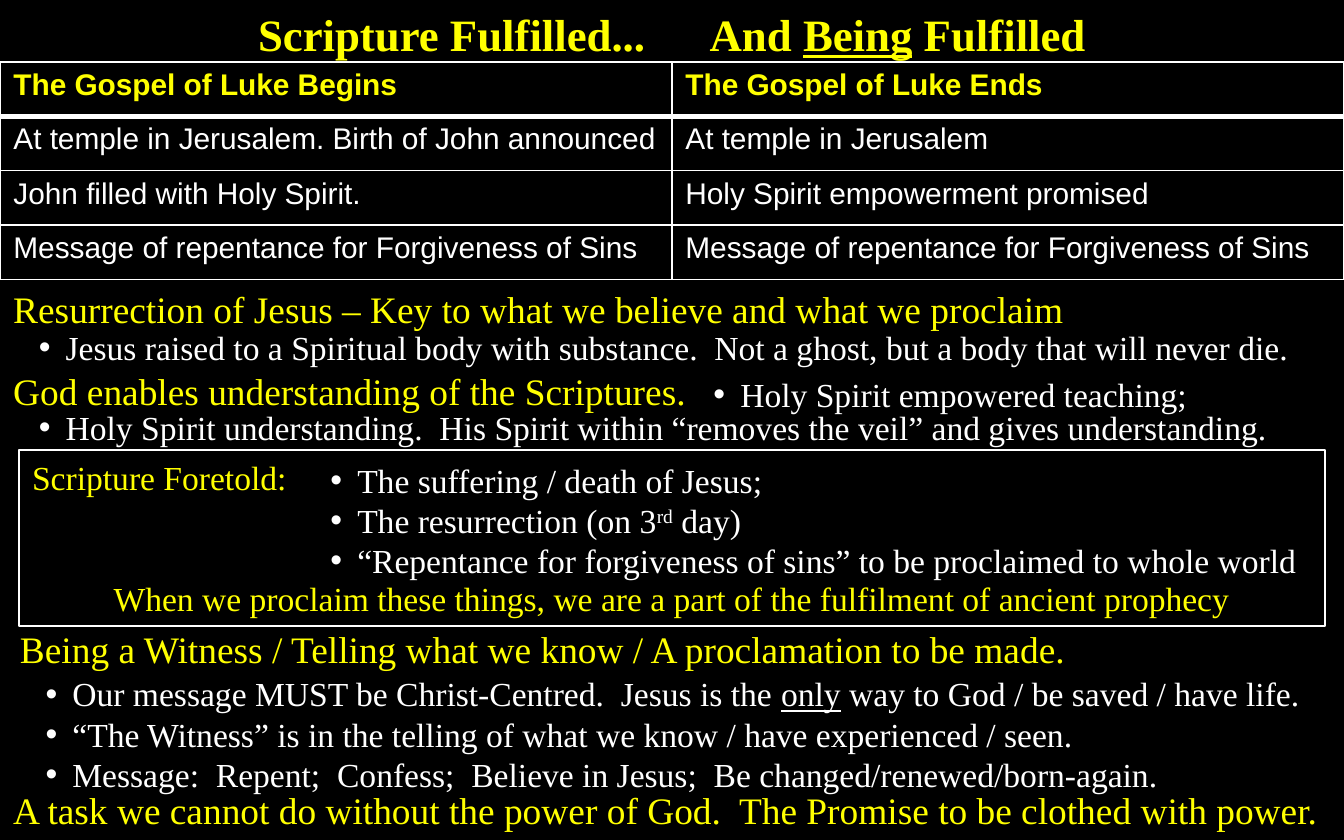
"""Build the slide on scripture fulfilled and being fulfilled."""
import pptx
import pptx.dml.color
import pptx.enum.shapes
import pptx.enum.text
import pptx.oxml
import pptx.oxml.ns
import pptx.util
from pptx.util import Inches

COLORS = {"black": "000000", "white": "FFFFFF", "yellow": "FFFF00"}
SERIF, SANS = "Times New Roman", "Arial"
ALIGN = pptx.enum.text.PP_ALIGN


def rgb(name):
    """Return the named colour."""
    return pptx.dml.color.RGBColor.from_string(COLORS[name])


def add_xml(parent, markup):
    """Append a DrawingML element to its parent."""
    namespace = pptx.oxml.ns.nsdecls("a")
    tag, rest = markup[:markup.index(" ")], markup[markup.index(" "):]
    parent.append(pptx.oxml.parse_xml(f"{tag} {namespace}{rest}"))


def write_text(paragraph, text, size=18, font=SERIF, color="white", bold=False,
               align=ALIGN.LEFT, bullet=False, tab=None, space_before=0):
    """Write text, given as a string or as (text, style) runs, in a paragraph."""
    properties = paragraph._p.get_or_add_pPr()
    if bullet:
        properties.set("marL", str(Inches(0.2)))
        properties.set("indent", str(-Inches(0.2)))
        add_xml(properties, f'<a:buFont typeface="{SANS}"/>')
        add_xml(properties, '<a:buChar char="•"/>')
    if tab:
        add_xml(properties, f'<a:tabLst ><a:tab pos="{Inches(tab)}" algn="l"/></a:tabLst>')
    paragraph.alignment = align
    if space_before:
        paragraph.space_before = pptx.util.Pt(space_before)
    for words, style in [(text, "")] if isinstance(text, str) else text:
        run = paragraph.add_run()
        run.text = words
        run.font.size = pptx.util.Pt(size)
        run.font.name = font
        run.font.bold = bold
        run.font.color.rgb = rgb(color)
        if style == "underline":
            run.font.underline = True
        if style == "superscript":
            run._r.get_or_add_rPr().set("baseline", "30000")


class SlideBuilder:
    """Hold the style and the current slide."""

    def __init__(self, presentation):
        """Add a title-only slide with a black background."""
        self.slide = presentation.slides.add_slide(presentation.slide_layouts[5])
        self.slide.background.fill.solid()
        self.slide.background.fill.fore_color.rgb = rgb("black")

    def title(self, runs, left_margin, tab):
        """Place and format the title."""
        shape = self.slide.shapes.title
        shape.left, shape.top = Inches(0), Inches(0)
        shape.width, shape.height = Inches(10), Inches(0.5)
        frame = shape.text_frame
        frame.auto_size = pptx.enum.text.MSO_AUTO_SIZE.NONE
        frame.vertical_anchor = pptx.enum.text.MSO_ANCHOR.TOP
        frame.margin_left = Inches(left_margin)
        write_text(frame.paragraphs[0], runs, size=24, color="yellow", bold=True, tab=tab)

    def text(self, left, top, width, height, lines, **style):
        """Add a text box with one paragraph per line."""
        shape = self.slide.shapes.add_textbox(
            Inches(left), Inches(top), Inches(width), Inches(height))
        frame = shape.text_frame
        frame.word_wrap = True
        frame.auto_size = pptx.enum.text.MSO_AUTO_SIZE.SHAPE_TO_FIT_TEXT
        for index, line in enumerate(lines):
            paragraph = frame.add_paragraph() if index else frame.paragraphs[0]
            write_text(paragraph, line, **style)

    def heading(self, left, top, width, text):
        """Add a yellow heading."""
        self.text(left, top, width, 0.44, [text], size=20, color="yellow")

    def bullets(self, left, top, width, height, lines):
        """Add a bulleted list."""
        self.text(left, top, width, height, lines, bullet=True)

    def box(self, left, top, width, height, opening, closing):
        """Add an outlined box with an opening and a closing line."""
        shape = self.slide.shapes.add_shape(
            pptx.enum.shapes.MSO_SHAPE.RECTANGLE,
            Inches(left), Inches(top), Inches(width), Inches(height))
        shape.shadow.inherit = False
        shape.fill.background()
        shape.line.color.rgb = rgb("white")
        shape.line.width = pptx.util.Pt(1.25)
        frame = shape.text_frame
        frame.word_wrap = True
        frame.vertical_anchor = pptx.enum.text.MSO_ANCHOR.TOP
        write_text(frame.paragraphs[0], opening, color="yellow")
        write_text(frame.add_paragraph(), closing, color="yellow",
                   align=ALIGN.CENTER, space_before=43)

    def table(self, left, top, width, height, rows):
        """Add a ruled table with a heavy line under its header."""
        table = self.slide.shapes.add_table(
            len(rows), len(rows[0]), Inches(left), Inches(top),
            Inches(width), Inches(height)).table
        table.horz_banding = False
        for row_index, row in enumerate(rows):
            header = row_index == 0
            for column_index, text in enumerate(row):
                cell = table.cell(row_index, column_index)
                write_text(cell.text_frame.paragraphs[0], text, size=16, font=SANS,
                           color="yellow" if header else "white", bold=header)
                properties = cell._tc.get_or_add_tcPr()
                for side in "LRTB":
                    heavy = (row_index, side) in ((0, "B"), (1, "T"))
                    line_width = pptx.util.Pt(3 if heavy else 1)
                    add_xml(properties, f'<a:ln{side} w="{line_width}"><a:solidFill>'
                            f'<a:srgbClr val="{COLORS["white"]}"/>'
                            f'</a:solidFill></a:ln{side}>')
                cell.fill.background()


def main():
    """Build and save the presentation."""
    presentation = pptx.Presentation()
    presentation.slide_width, presentation.slide_height = Inches(10), Inches(6.25)
    builder = SlideBuilder(presentation)
    builder.title([("Scripture Fulfilled...\tAnd ", ""), ("Being", "underline"),
                   (" Fulfilled", "")], left_margin=1.92, tab=3.36)
    builder.heading(0, 2.08, 8.82,
                    "Resurrection of Jesus – Key to what we believe and what we proclaim")
    builder.bullets(0.19, 2.38, 9.81, 0.4, [
        "Jesus raised to a Spiritual body with substance.  "
        "Not a ghost, but a body that will never die."])
    builder.table(0, 0.46, 10, 1.62, [
        ("The Gospel of Luke Begins", "The Gospel of Luke Ends"),
        ("At temple in Jerusalem. Birth of John announced", "At temple in Jerusalem"),
        ("John filled with Holy Spirit.", "Holy Spirit empowerment promised"),
        ("Message of repentance for Forgiveness of Sins",) * 2])
    builder.heading(0, 2.69, 8.82, "God enables understanding of the Scriptures.")
    builder.bullets(0.19, 2.98, 9.81, 0.4, [
        "Holy Spirit understanding.  "
        "His Spirit within “removes the veil” and gives understanding."])
    builder.box(0.14, 3.35, 9.72, 1.31, "Scripture Foretold:",
                "When we proclaim these things, we are a part of the fulfilment "
                "of ancient prophecy")
    builder.bullets(2.36, 3.37, 7.69, 1.01, [
        "The suffering / death of Jesus;",
        [("The resurrection (on 3", ""), ("rd", "superscript"), (" day)", "")],
        "“Repentance for forgiveness of sins” to be proclaimed to whole world"])
    builder.heading(0.05, 4.61, 10.01,
                    "Being a Witness / Telling what we know / A proclamation to be made.")
    builder.bullets(0.24, 4.96, 9.81, 1.01, [
        [("Our message MUST be Christ-Centred.  Jesus is the ", ""), ("only", "underline"),
         (" way to God / be saved / have life.", "")],
        "“The Witness” is in the telling of what we know / have experienced / seen.",
        "Message:  Repent;  Confess;  Believe in Jesus;  Be changed/renewed/born-again."])
    builder.bullets(5.21, 2.73, 3.81, 0.4, ["Holy Spirit empowered teaching;"])
    builder.heading(0, 5.81, 10.01,
                    "A task we cannot do without the power of God.  "
                    "The Promise to be clothed with power.")
    presentation.save("out.pptx")


if __name__ == "__main__":
    main()
